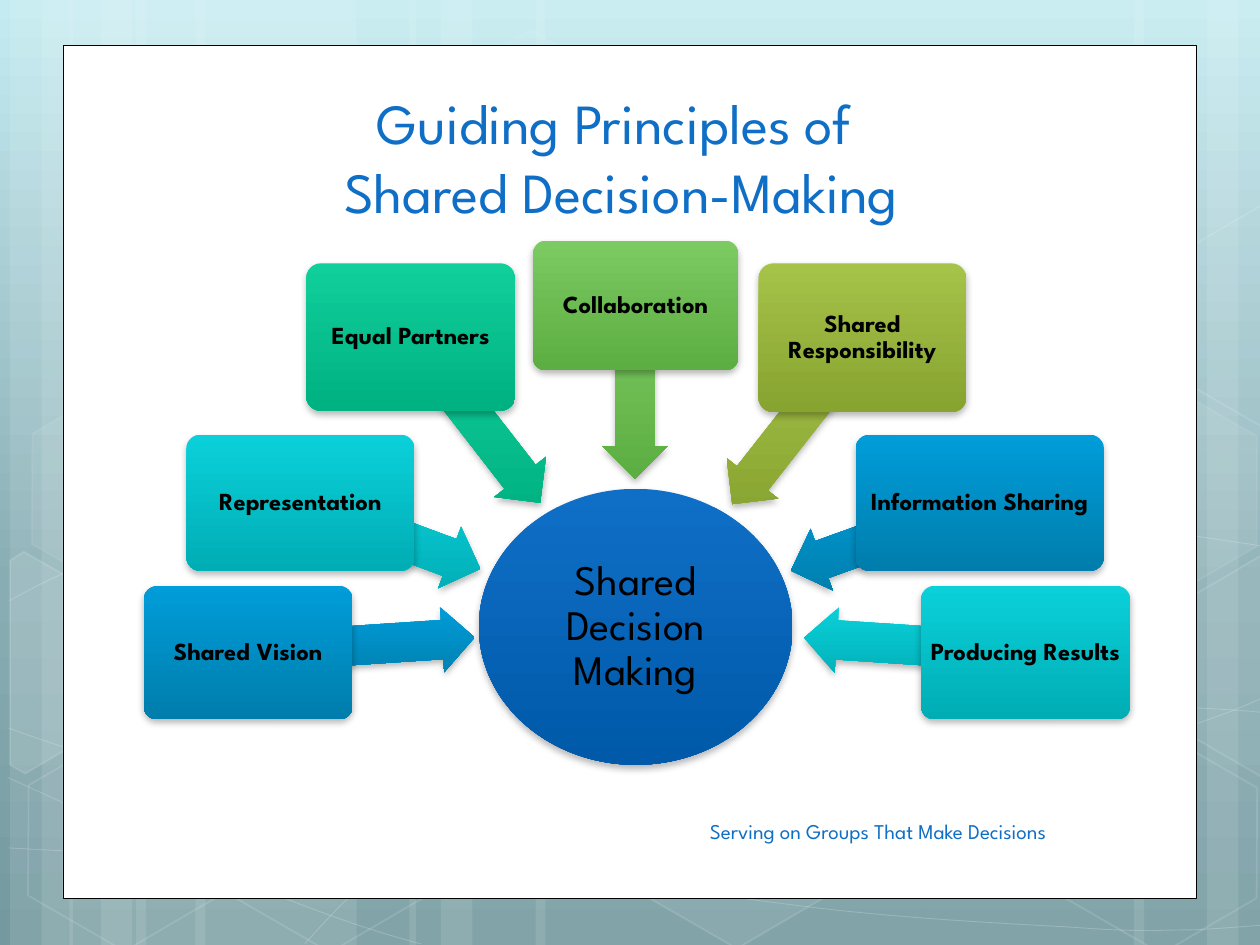
from copy import deepcopy
from dataclasses import dataclass
from typing import NamedTuple

from lxml.etree import SubElement
from pptx import Presentation
from pptx.dml.color import RGBColor
from pptx.enum.shapes import MSO_SHAPE
from pptx.enum.text import MSO_ANCHOR, PP_ALIGN
from pptx.oxml.ns import qn
from pptx.util import Inches, Pt


@dataclass(frozen=True)
class Theme:
    font: str = "League Spartan"
    title_size: float = 32.4
    hub_size: float = 24
    label_size: float = 14
    footer_size: float = 12
    accent: str = "0F6FC6"
    black: str = "000000"
    white: str = "FFFFFF"
    background: tuple = ((0, "C4EBF1"), (0.62, "88ADB3"), (1, "749AA0"))
    hub: tuple = ("0F6FC6", "0059A9")
    blue: tuple = ("009DD9", "007DAC")
    cyan: tuple = ("0BD0D9", "00ADB5")
    teal: tuple = ("10CF9B", "00B181")
    green: tuple = ("7CCA62", "5CAD42")
    olive: tuple = ("A5C249", "88A430")


THEME = Theme()


class Box(NamedTuple):
    left: float
    top: float
    width: float
    height: float


class Hexagon(NamedTuple):
    left: float
    top: float
    fill: int  # opacity in percent
    line: int


class Principle(NamedTuple):
    label: str
    colors: tuple
    box: Box
    arrow: Box
    angle: float


BARS = [(1.08, 1.75), (0.08, 0.5), (0.33, 0.83), (1.55, 1.75), (0.55, 0.5), (0.8, 0.83),
        (7.33, 1.75), (9.58, 0.5), (9, 0.83), (4.25, 3.08), (3.25, 0.5), (3.5, 0.83)]

# Each curve is a start point followed by triples of Bezier points
CURVES = [
    [(0.07, 6.73), (0.61, 6.76), (1.15, 6.79), (1.9, 6.78), (2.65, 6.77), (3.58, 6.75), (4.58, 6.65),
     (5.58, 6.55), (7, 6.36), (7.92, 6.17), (8.83, 5.98), (9.77, 5.68), (10.07, 5.51)],
    [(0.07, 4.77), (0.36, 4.61), (0.65, 4.46), (1.21, 4.31), (1.78, 4.16), (2.59, 3.94), (3.47, 3.87),
     (4.36, 3.8), (5.44, 3.79), (6.54, 3.87), (7.64, 3.95), (9.47, 4.26), (10.07, 4.34)],
    [(0.06, 6.17), (1.27, 6.72), (2.47, 7.27), (3.34, 7.49)],
    [(0.07, 5.78), (0.38, 5.89), (0.7, 6), (1.28, 6.16), (1.86, 6.31), (2.73, 6.56), (3.57, 6.73),
     (4.4, 6.9), (5.45, 7.08), (6.28, 7.18), (7.11, 7.29), (8, 7.33), (8.53, 7.36),
     (9.05, 7.4), (9.19, 7.38), (9.45, 7.38), (9.71, 7.37), (9.89, 7.35), (10.07, 7.34)],
    [(2.42, 7.49), (2.6, 7.29), (2.78, 7.09), (3.02, 6.91), (3.26, 6.73), (3.6, 6.53), (3.88, 6.39),
     (4.16, 6.25), (4.33, 6.19), (4.7, 6.09), (5.06, 5.99), (5.73, 5.85), (6.08, 5.78),
     (6.44, 5.71), (6.49, 5.71), (6.8, 5.69), (7.11, 5.66), (7.6, 5.63), (7.94, 5.62),
     (8.29, 5.61), (8.86, 5.62), (8.86, 5.62), (9.08, 5.62), (9.31, 5.62), (9.53, 5.62),
     (9.71, 5.63), (9.88, 5.64), (9.97, 5.65), (10.06, 5.66), (10.03, 5.65), (10.06, 5.66)],
]

HEXAGONS = [Hexagon(3.34, 0.36, 4, 8), Hexagon(4.97, 5.89, 6, 12), Hexagon(0.11, 5.91, 0, 12),
            Hexagon(0.14, 3.12, 7, 8), Hexagon(1.74, 5.92, 0, 12), Hexagon(7.53, 4.53, 10, 12),
            Hexagon(8.34, 5.93, 0, 12), Hexagon(8.34, 3.14, 7, 8)]

# Hexagons cut by the slide edge: points and fill opacity
CUT_HEXAGONS = [
    ([(0.08, 4.45), (0.19, 4.38), (0.96, 4.82), (0.95, 5.7), (0.2, 6.14), (0.08, 6.07)], 10),
    ([(9.26, 4.85), (10.01, 4.41), (10.09, 4.46), (10.09, 6.13), (10.02, 6.17), (9.26, 5.73)], 4),
    ([(9.26, 2.07), (10.01, 1.63), (10.1, 1.68), (10.09, 3.35), (10.02, 3.39), (9.26, 2.95)], 0),
]

PRINCIPLES = [
    Principle("Shared Vision", THEME.blue, Box(1.14, 4.65, 1.66, 1.06), Box(1.92, 4.86, 1.85, 0.52), 176.2),
    Principle("Representation", THEME.cyan, Box(1.48, 3.45, 1.81, 1.08), Box(2.34, 3.99, 1.52, 0.52), 200.4),
    Principle("Equal Partners", THEME.teal, Box(2.43, 2.09, 1.66, 1.17), Box(2.94, 3.07, 1.67, 0.52), 232.2),
    Principle("Collaboration", THEME.green, Box(4.23, 1.91, 1.63, 1.03), Box(4.35, 2.85, 1.38, 0.52), 270),
    Principle("Shared Responsibility", THEME.olive, Box(6.02, 2.09, 1.65, 1.18), Box(5.49, 3.08, 1.68, 0.52), 308.1),
    Principle("Information Sharing", THEME.blue, Box(6.79, 3.45, 1.97, 1.08), Box(6.23, 4, 1.59, 0.52), 340.2),
    Principle("Producing Results", THEME.cyan, Box(7.31, 4.65, 1.66, 1.06), Box(6.38, 4.86, 1.76, 0.52), 3.8),
]


def paint(fill, color: str, opacity: int = 100) -> None:
    """Give a fill a solid colour, or none at zero opacity."""
    if opacity == 0:
        fill.background()
        return
    fill.solid()
    fill.fore_color.rgb = RGBColor.from_string(color)
    if opacity < 100:
        solid = fill._xPr.find(qn("a:solidFill"))
        SubElement(solid[0], qn("a:alpha"), val=str(opacity * 1000))


def paint_gradient(fill, stops: tuple) -> None:
    """Give a fill a gradient from top to bottom that ignores rotation."""
    fill.gradient()
    fill.gradient_angle = 270
    gradient = fill._xPr.find(qn("a:gradFill"))
    gradient.set("rotWithShape", "0")
    stop_list = gradient.find(qn("a:gsLst"))
    for _ in stops[2:]:
        stop_list.append(deepcopy(stop_list[-1]))
    for stop, (position, color) in zip(fill.gradient_stops, stops):
        stop.position = position
        stop.color.rgb = RGBColor.from_string(color)


def style(shape, fill: int, line: int, width: float = 1) -> None:
    """White fill and outline at the given opacities."""
    shape.shadow.inherit = False
    paint(shape.fill, THEME.white, fill)
    paint(shape.line.fill, THEME.white, line)
    if line:
        shape.line.width = Pt(width)


def add_preset(slide, kind, box: Box):
    return slide.shapes.add_shape(kind, *map(Inches, box))


def add_outline(slide, points: list, close: bool):
    corners = [(Inches(x), Inches(y)) for x, y in points]
    builder = slide.shapes.build_freeform(*corners[0])
    builder.add_line_segments(corners[1:], close=close)
    return builder.convert_to_shape()


def add_curve(slide, points: list):
    """An open outline whose line segments are joined by threes into Bezier curves."""
    shape = add_outline(slide, points, close=False)
    outline = next(shape._element.iter(qn("a:path")))
    segments = outline.findall(qn("a:lnTo"))
    for start in range(0, len(segments), 3):
        bezier = SubElement(outline, qn("a:cubicBezTo"))
        for segment in segments[start:start + 3]:
            bezier.append(segment[0])
            outline.remove(segment)
    return shape


def add_diagram_shape(slide, kind, box: Box, colors: tuple):
    """A shape with a gradient and a soft shadow below."""
    shape = add_preset(slide, kind, box)
    shape.line.fill.background()
    paint_gradient(shape.fill, tuple(enumerate(colors)))
    shape.shadow.inherit = False
    effects = shape._element.spPr.find(qn("a:effectLst"))
    shadow = SubElement(effects, qn("a:outerShdw"), blurRad=str(Pt(4)), dist=str(Pt(2)),
                        dir="5400000", rotWithShape="0")
    color = SubElement(shadow, qn("a:srgbClr"), val=THEME.black)
    SubElement(color, qn("a:alpha"), val="28000")
    return shape


def write(shape, text: str, size: float, color: str, bold: bool = False,
          anchor=MSO_ANCHOR.MIDDLE, margin: float | None = None, spacing: float | None = None) -> None:
    frame = shape.text_frame
    frame.word_wrap = True
    frame.vertical_anchor = anchor
    if margin is not None:
        frame.margin_left = frame.margin_right = frame.margin_top = frame.margin_bottom = Inches(margin)
    paragraph = frame.paragraphs[0]
    paragraph.text = text
    paragraph.alignment = PP_ALIGN.CENTER
    paragraph.line_spacing = spacing
    paragraph.font.name = THEME.font
    paragraph.font.size = Pt(size)
    paragraph.font.bold = bold
    paragraph.font.color.rgb = RGBColor.from_string(color)


def add_backdrop(slide) -> None:
    paint_gradient(slide.background.fill, THEME.background)
    for left, width in BARS:
        style(add_preset(slide, MSO_SHAPE.RECTANGLE, Box(left, 0, width, 7.5)), 10, 0)
    for curve in CURVES:
        style(add_curve(slide, curve), 0, 20, 0.5)
    for hexagon in HEXAGONS:
        shape = add_preset(slide, MSO_SHAPE.HEXAGON, Box(hexagon.left, hexagon.top, 1.75, 1.52))
        shape.adjustments[0] = 0.285
        shape.rotation = 30
        style(shape, hexagon.fill, hexagon.line)
    for points, opacity in CUT_HEXAGONS:
        style(add_outline(slide, points, close=True), opacity, 12)
    # White panel
    panel = add_preset(slide, MSO_SHAPE.RECTANGLE, Box(0.5, 0.36, 9, 6.77))
    style(panel, 100, 100, 0.5)
    paint(panel.line.fill, THEME.black)


def add_principle(slide, principle: Principle) -> None:
    arrow = add_diagram_shape(slide, MSO_SHAPE.LEFT_ARROW, principle.arrow, principle.colors)
    arrow.adjustments[0] = 0.6
    arrow.rotation = principle.angle
    card = add_diagram_shape(slide, MSO_SHAPE.ROUNDED_RECTANGLE, principle.box, principle.colors)
    card.adjustments[0] = 0.1
    write(card, principle.label, THEME.label_size, THEME.black, bold=True, margin=0.03, spacing=0.9)


def main() -> None:
    presentation = Presentation()
    presentation.slide_width, presentation.slide_height = Inches(10), Inches(7.5)
    slide = presentation.slides.add_slide(presentation.slide_layouts[6])
    add_backdrop(slide)

    # Title and footer
    title = slide.shapes.add_textbox(*map(Inches, Box(1.09, 0.58, 7.68, 1.25)))
    write(title, "Guiding Principles of \vShared Decision-Making", THEME.title_size, THEME.accent,
          anchor=MSO_ANCHOR.BOTTOM)
    footer = slide.shapes.add_textbox(*map(Inches, Box(5.03, 6.4, 3.88, 0.4)))
    write(footer, "Serving on Groups That Make Decisions", THEME.footer_size, THEME.accent)

    # Hub and the principles around it
    hub = add_diagram_shape(slide, MSO_SHAPE.OVAL, Box(3.8, 3.88, 2.49, 2.19), THEME.hub)
    write(hub, "Shared Decision Making", THEME.hub_size, THEME.black, margin=0.02, spacing=0.9)
    for principle in PRINCIPLES:
        add_principle(slide, principle)
    presentation.save("out.pptx")


if __name__ == "__main__":
    main()
